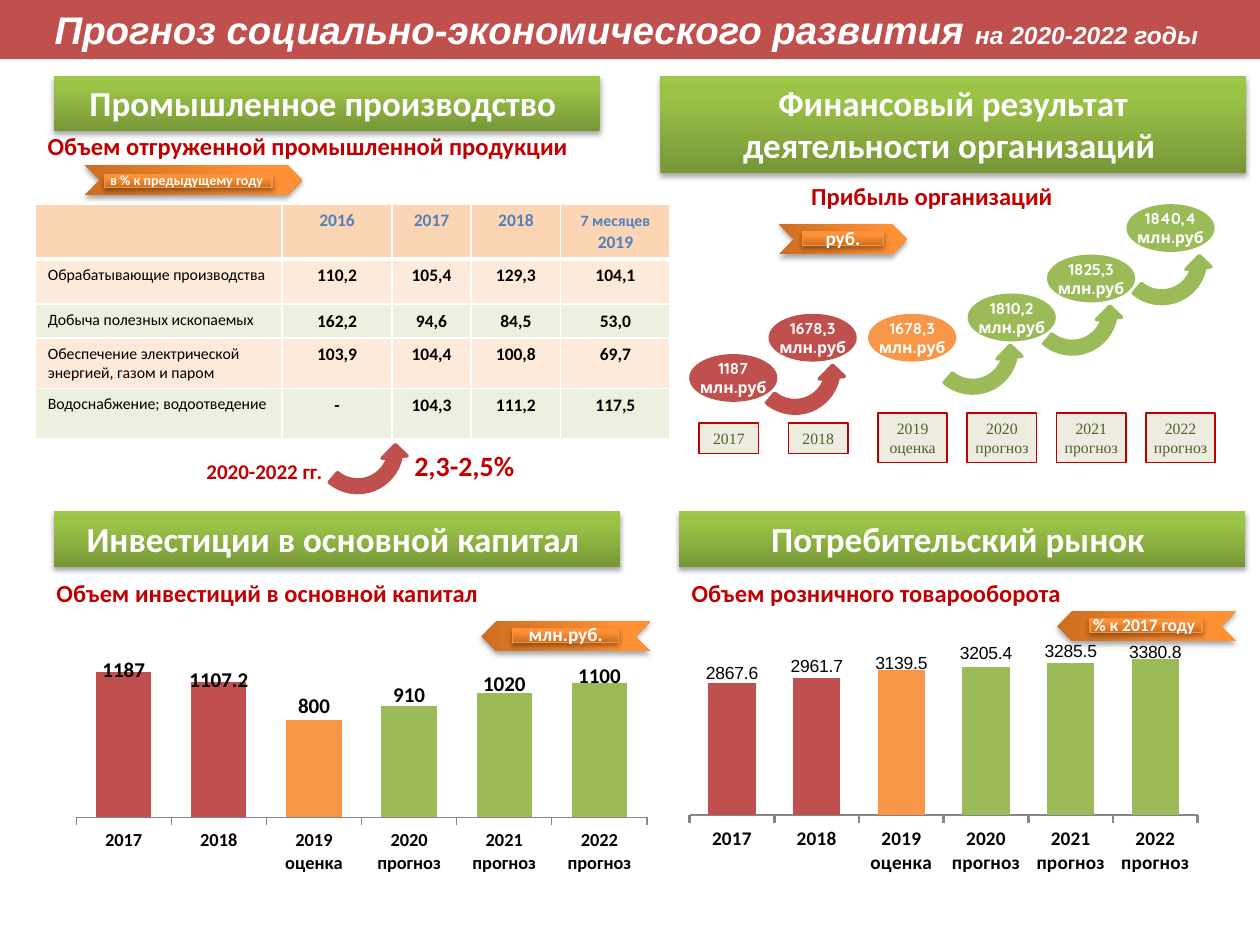
from dataclasses import dataclass

from lxml import etree
from pptx import Presentation, util as u
from pptx.chart.data import CategoryChartData
from pptx.dml.color import RGBColor
from pptx.enum import chart as ch, shapes, text
from pptx.oxml import ns

COLUMNS, ROWS = 100, 75  # slide grid


@dataclass(frozen=True)
class Theme:
    red: str = "C0504D"
    orange: str = "F79646"
    green: str = "9BBB59"
    dark_red: str = "C00000"
    blue: str = "4F81BD"
    olive: str = "4F6228"
    beige: str = "EEECE1"
    axis: str = "868686"
    black: str = "000000"
    white: str = "FFFFFF"
    header: str = "FCD5B5"
    bands: tuple = ("FDEADA", "EBF1DE")
    banner: tuple = ((0, "779737"), (80, "9BC348"), (100, "9DC746"))
    ribbon: tuple = ((0, "CC6E20"), (80, "FF9034"), (100, "FF9136"))
    ribbon_edge: str = "F69240"
    heading: float = 20
    subtitle: float = 14
    body: float = 10
    small: float = 9


@dataclass(frozen=True)
class Box:
    """Position and size in grid columns and rows."""
    col: float
    row: float
    cols: float
    rows: float


@dataclass(frozen=True)
class Style:
    size: float
    color: str
    bold: bool = True
    italic: bool = False
    font: str = "Calibri"


@dataclass(frozen=True)
class Ribbon:
    box: Box
    label_box: Box
    label: str
    size: float
    rotation: int = 0


@dataclass(frozen=True)
class Columns:
    box: Box
    values: tuple
    colors: str
    shifts: tuple
    plot: tuple
    gap: int
    limits: tuple
    axis_size: float
    axis_width: float
    label: Style


T = Theme()
prs = Presentation()
prs.slide_width, prs.slide_height = u.Inches(10), u.Inches(7.5)
slide = prs.slides.add_slide(prs.slide_layouts[6])
CENTER, LEFT = text.PP_ALIGN.CENTER, text.PP_ALIGN.LEFT


def rgb(color: str) -> RGBColor:
    return RGBColor.from_string(color)


def place(box: Box) -> tuple:
    across, down = prs.slide_width / COLUMNS, prs.slide_height / ROWS
    return (int(box.col * across), int(box.row * down), int(box.cols * across), int(box.rows * down))


def set_font(font, style: Style) -> None:
    font.size, font.bold, font.italic, font.name = u.Pt(style.size), style.bold, style.italic, style.font
    font.color.rgb = rgb(style.color)


def write(frame, lines: list, align=CENTER, inset=None, wrap: bool = True, anchor=text.MSO_ANCHOR.TOP) -> None:
    """Each line is a list of (wording, style) runs."""
    frame.word_wrap, frame.vertical_anchor = wrap, anchor
    if inset is not None:
        frame.margin_left = frame.margin_right = frame.margin_top = frame.margin_bottom = u.Inches(inset)
    for index, line in enumerate(lines):
        paragraph = frame.add_paragraph() if index else frame.paragraphs[0]
        paragraph.alignment = align
        for wording, style in line:
            run = paragraph.add_run()
            run.text = wording
            set_font(run.font, style)


def add_shape(kind, box: Box, fill, line: str = "", line_width: float = 0.75):
    shape = slide.shapes.add_shape(kind, *place(box))
    shape.shadow.inherit = False
    if isinstance(fill, str):
        shape.fill.solid()
        shape.fill.fore_color.rgb = rgb(fill)
    if line:
        shape.line.color.rgb, shape.line.width = rgb(line), u.Pt(line_width)
    else:
        shape.line.fill.background()
    return shape


def add_raised(kind, box: Box, stops: tuple, angle: int = 90, line: str = ""):
    """A shape with a gradient and a soft shadow below it."""
    shape = add_shape(kind, box, None, line)
    shape.fill.gradient()
    shape.fill.gradient_angle = angle
    gradient = shape.element.spPr.find(ns.qn("a:gradFill"))
    gradient.set("rotWithShape", "0")
    stop_list = gradient.find(ns.qn("a:gsLst"))
    for old in list(stop_list):
        stop_list.remove(old)
    for position, color in stops:
        stop = etree.SubElement(stop_list, ns.qn("a:gs"), pos=str(position * 1000))
        etree.SubElement(stop, ns.qn("a:srgbClr"), val=color)
    effects = shape.element.spPr.find(ns.qn("a:effectLst"))
    shadow = etree.SubElement(effects, ns.qn("a:outerShdw"), blurRad=str(u.Pt(3.1)), dist=str(u.Pt(1.8)),
                              dir="5400000", rotWithShape="0")
    tint = etree.SubElement(shadow, ns.qn("a:srgbClr"), val=T.black)
    etree.SubElement(tint, ns.qn("a:alpha"), val="35000")
    return shape


def add_banner(box: Box, heading: str) -> None:
    banner = add_raised(shapes.MSO_SHAPE.RECTANGLE, box, T.banner)
    write(banner.text_frame, [[(heading, Style(T.heading, T.white))]])


def add_ribbon(ribbon: Ribbon) -> None:
    add_raised(shapes.MSO_SHAPE.CHEVRON, ribbon.box, T.ribbon, 0).rotation = ribbon.rotation
    plate = add_raised(shapes.MSO_SHAPE.RECTANGLE, ribbon.label_box, T.ribbon, line=T.ribbon_edge)
    write(plate.text_frame, [[(ribbon.label, Style(ribbon.size, T.white))]], inset=0.01,
          anchor=text.MSO_ANCHOR.MIDDLE)
    plate.text_frame.paragraphs[0].line_spacing = 0.9


def add_caption(box: Box, wording: str, size: float = T.subtitle) -> None:
    caption = slide.shapes.add_textbox(*place(box))
    write(caption.text_frame, [[(wording, Style(size, T.dark_red))]], LEFT)


def add_growth_arrow(col: float, row: float, color: str) -> None:
    """An arc that dips below its centre and rises to the right."""
    arrow = add_shape(shapes.MSO_SHAPE.CIRCULAR_ARROW, Box(col, row, 8, 8), color, color, 2)
    for index, value in enumerate((0.125, 11.42, 204.58, 134.35, 0.125)):
        arrow.adjustments[index] = value
    arrow.rotation = 354.1
    arrow.element.spPr.find(ns.qn("a:xfrm")).set("flipV", "1")


def add_output_table(box: Box, widths: tuple, heights: tuple, rows: list) -> None:
    table = slide.shapes.add_table(len(rows), len(widths), *place(box)).table
    for column, width in zip(table.columns, widths):
        column.width = int(width * prs.slide_width / COLUMNS)
    for r, (row, height) in enumerate(zip(rows, heights)):
        table.rows[r].height = int(height * prs.slide_height / ROWS)
        for c, wording in enumerate(row):
            cell = table.cell(r, c)
            style = Style(T.body if c else T.small, T.black if r else T.blue, bold=c > 0 or r == 0)
            runs = [(wording, style)] if wording else []
            if wording.startswith("7"):
                month, year = wording.rsplit(" ", 1)
                runs = [(month, Style(T.small, T.blue)), (" " + year, style)]
            write(cell.text_frame, [runs], CENTER if c else LEFT)
            properties = cell._tc.get_or_add_tcPr()
            for side in ("lnL", "lnR", "lnT", "lnB"):
                thick = (side == "lnB" and r == 0) or (side == "lnT" and r == 1)
                edge = etree.SubElement(properties, ns.qn("a:" + side), w=str(u.Pt(3 if thick else 1)))
                etree.SubElement(etree.SubElement(edge, ns.qn("a:solidFill")), ns.qn("a:srgbClr"), val=T.white)
            cell.fill.solid()
            cell.fill.fore_color.rgb = rgb(T.bands[(r - 1) % 2] if r else T.header)


def manual_layout(**values):
    layout = etree.Element(ns.qn("c:layout"))
    manual = etree.SubElement(layout, ns.qn("c:manualLayout"))
    for tag, value in values.items():
        etree.SubElement(manual, ns.qn("c:" + tag), val=str(value))
    return layout


def add_columns(spec: Columns) -> None:
    data = CategoryChartData()
    data.categories = ["2017", "2018", "2019 оценка", "2020 прогноз", "2021 прогноз", "2022 прогноз"]
    data.add_series("Series 1", spec.values)
    chart = slide.shapes.add_chart(ch.XL_CHART_TYPE.COLUMN_STACKED, *place(spec.box), data).chart
    chart.has_legend = chart.has_title = False
    set_font(chart.font, Style(18, T.black, bold=False))
    years, amounts, plot = chart.category_axis, chart.value_axis, chart.plots[0]
    set_font(years.tick_labels.font, Style(spec.axis_size, T.black))
    years.major_tick_mark = ch.XL_TICK_MARK.OUTSIDE
    years.format.line.color.rgb, years.format.line.width = rgb(T.axis), u.Pt(spec.axis_width)
    amounts.visible = amounts.has_major_gridlines = False
    amounts.minimum_scale, amounts.maximum_scale = spec.limits
    plot.gap_width, plot.overlap, plot.vary_by_categories = spec.gap, 100, False
    for index, color in enumerate(spec.colors.split()):
        point = plot.series[0].points[index]
        point.format.fill.solid()
        point.format.fill.fore_color.rgb = rgb(getattr(T, color))
        label = point.data_label
        set_font(label.font, spec.label)
        label.position = ch.XL_LABEL_POSITION.INSIDE_END
    for mark, shift in zip(chart._chartSpace.iter(ns.qn("c:dLbl")), spec.shifts):
        mark.find(ns.qn("c:idx")).addnext(manual_layout(x=0, y=shift))
    area = chart._chartSpace.find(".//" + ns.qn("c:plotArea"))
    for old in area.findall(ns.qn("c:layout")):
        area.remove(old)
    x, y, w, h = spec.plot
    area.insert(0, manual_layout(layoutTarget="inner", xMode="edge", yMode="edge", x=x, y=y, w=w, h=h))


# Title strip
strip = add_shape(shapes.MSO_SHAPE.RECTANGLE, Box(0, 0, 100, 4.7), T.red)
write(strip.text_frame, [[(wording, Style(size, T.white, italic=True, font="Arial")) for wording, size in
                          (("Прогноз социально-экономического развития ", 22), ("на 2020-2022 годы ", 14))]])

# Section headings, captions and unit ribbons
for box, heading in ((Box(4.3, 6, 43.3, 4.4), "Промышленное производство "),
                     (Box(52.4, 6, 46.5, 7.7), "Финансовый результат деятельности организаций "),
                     (Box(4.3, 40.6, 44.9, 4.4), "Инвестиции в основной капитал "),
                     (Box(53.9, 40.6, 44.9, 4.4), "Потребительский рынок ")):
    add_banner(box, heading)
for box, caption in ((Box(2.8, 9.9, 49.6, 3.9), "Объем отгруженной промышленной продукции"),
                     (Box(63.4, 13.9, 21.3, 3.9), "Прибыль организаций"),
                     (Box(3.5, 45.4, 49.6, 3.9), "Объем инвестиций в основной капитал"),
                     (Box(53.9, 45.4, 44.9, 3.9), "Объем розничного товарооборота")):
    add_caption(box, caption)
for ribbon in (Ribbon(Box(6.7, 13.1, 17.3, 2.4), Box(8.3, 13.9, 13.3, 1), "в % к предыдущему году ", 8),
               Ribbon(Box(61.8, 17.8, 10.2, 2.4), Box(63.7, 18.4, 6.4, 1.1), "руб.", 11),
               Ribbon(Box(38.2, 49.3, 13.4, 2.4), Box(40.7, 49.9, 8.4, 1.1), "млн.руб.", 11, 180),
               Ribbon(Box(83.9, 48.5, 14.2, 2.4), Box(86.5, 49.1, 8.9, 1.1), "% к 2017 году ", 10, 180)):
    add_ribbon(ribbon)

# Industrial output
add_output_table(Box(2.8, 16.2, 50.4, 18.6), (19.6, 8.7, 6.3, 7.1, 8.7), (4.1, 3.6, 2.5, 3.8, 4.0), [
    ("", "2016", "2017", "2018", "7 месяцев 2019"),
    ("Обрабатывающие производства", "110,2", "105,4", "129,3", "104,1"),
    ("Добыча полезных ископаемых", "162,2", "94,6", "84,5", "53,0"),
    ("Обеспечение электрической энергией, газом и паром", "103,9", "104,4", "100,8", "69,7"),
    ("Водоснабжение; водоотведение", "-", "104,3", "111,2", "117,5")])
add_growth_arrow(24.4, 31.6, T.red)
add_caption(Box(15.4, 35.9, 12.6, 3.1), "2020-2022 гг.", 12)
add_caption(Box(31.9, 35.1, 12.6, 3.1), "2,3-2,5%", 16)

# Profit by year
for col, row, amount, color in ((54.7, 28.1, "1187", T.red), (61, 24.9, "1678,3", T.red),
                                (68.9, 24.9, "1678,3", T.orange), (76.8, 23.3, "1810,2", T.green),
                                (83.1, 20.2, "1825,3", T.green), (89.4, 16.2, "1840,4", T.green)):
    bubble = add_shape(shapes.MSO_SHAPE.OVAL, Box(col, row, 7, 3.8), color)
    write(bubble.text_frame, [[(line, Style(T.small, T.white, font="Quicksand"))] for line in (amount, "млн.руб")],
          inset=0, wrap=False, anchor=text.MSO_ANCHOR.MIDDLE)
for index, lines in enumerate((("2017",), ("2018",), ("2019", "оценка"), ("2020", "прогноз"),
                               ("2021", "прогноз"), ("2022", "прогноз"))):
    col = 55.5 + 7.09 * index
    box = Box(col, 32.8, 5.5, 3.9) if len(lines) > 1 else Box(col, 33.6, 4.7, 2.4)
    year = add_shape(shapes.MSO_SHAPE.ROUNDED_RECTANGLE, box, T.beige, T.dark_red, 1)
    year.adjustments[0] = 0
    write(year.text_frame, [[(line, Style(T.small, T.olive, bold=False, font="Times New Roman"))] for line in lines],
          wrap=False, anchor=text.MSO_ANCHOR.MIDDLE)
for col, row, color in ((59.1, 25.3, T.red), (73.2, 23.7, T.green), (81.1, 20.6, T.green), (88.2, 16.6, T.green)):
    add_growth_arrow(col, row, color)

# Investment and retail charts
COLORS = "red red orange green green green"
add_columns(Columns(Box(5.1, 50.9, 47.2, 18.9), (1187, 1107.2, 800, 910, 1020, 1100), COLORS,
                    (-0.08, -0.08, -0.13, -0.12, -0.11, -0.1), (0.02, 0.02, 0.96, 0.72), 72, (0, 1400),
                    10.5, 0.75, Style(12, T.black)))
add_columns(Columns(Box(53.9, 50.9, 42, 18.9), (2867.6, 2961.7, 3139.5, 3205.4, 3285.5, 3380.8), COLORS,
                    (-0.1, -0.11, -0.09, -0.12, -0.11, -0.09), (0.02, 0.05, 0.96, 0.68), 78, (18, 3500),
                    11, 1.5, Style(10, T.black, bold=False, font="Arial")))
prs.save("out.pptx")
